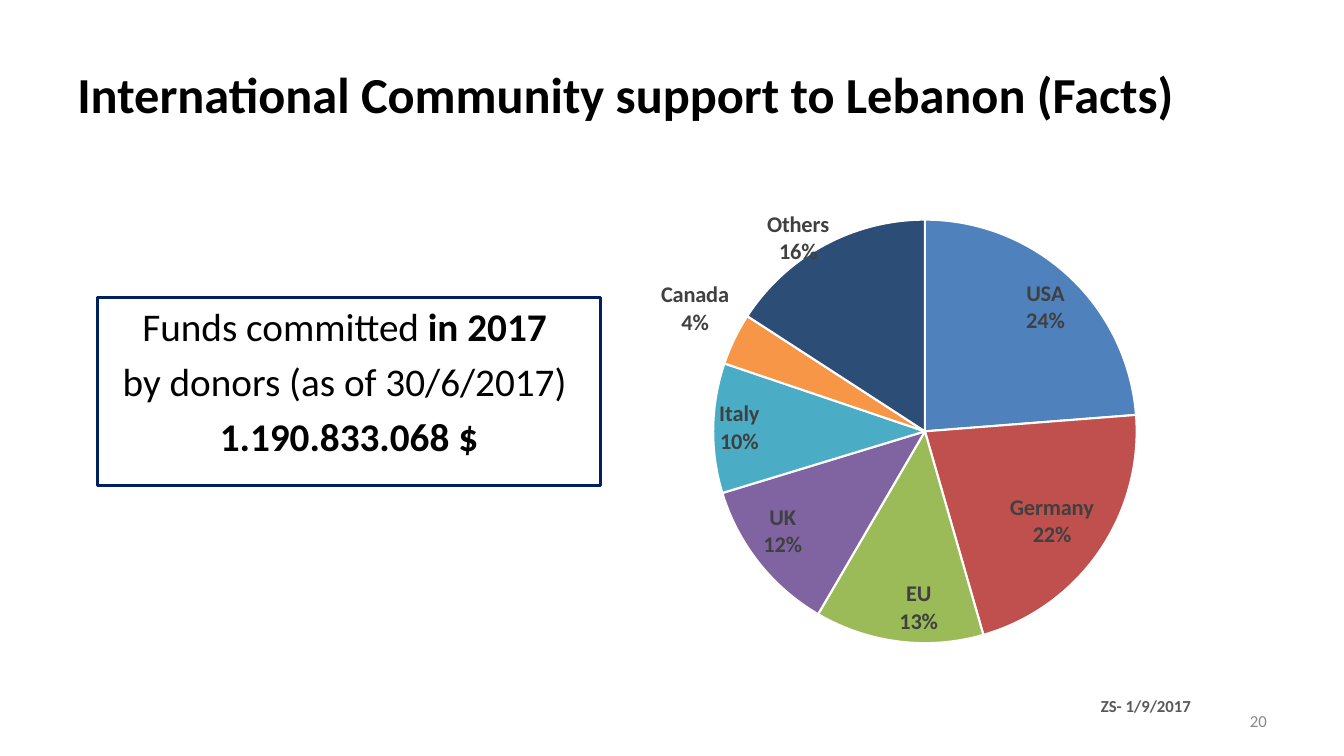
from dataclasses import dataclass
from typing import Any

from lxml import etree
from pptx import Presentation
from pptx import util as u
from pptx.chart import data as chart_data
from pptx.dml.color import RGBColor
from pptx.enum import chart as charts
from pptx.enum import shapes, text
from pptx.oxml import ns

BLACK = RGBColor(0x00, 0x00, 0x00)
WHITE = RGBColor(0xFF, 0xFF, 0xFF)
NAVY = RGBColor(0x00, 0x20, 0x60)
LABEL_GRAY = RGBColor(0x40, 0x40, 0x40)
DATE_GRAY = RGBColor(0x59, 0x59, 0x59)
NUMBER_GRAY = RGBColor(0x89, 0x89, 0x89)
BLUE = RGBColor(0x4F, 0x81, 0xBD)
RED = RGBColor(0xC0, 0x50, 0x4D)
GREEN = RGBColor(0x9B, 0xBB, 0x59)
PURPLE = RGBColor(0x80, 0x64, 0xA2)
TEAL = RGBColor(0x4B, 0xAC, 0xC6)
ORANGE = RGBColor(0xF7, 0x96, 0x46)
DARK_BLUE = RGBColor(0x2C, 0x4D, 0x75)

FONT = "Calibri"
LEFT, CENTER, RIGHT = text.PP_ALIGN.LEFT, text.PP_ALIGN.CENTER, text.PP_ALIGN.RIGHT
INSIDE = charts.XL_LABEL_POSITION.INSIDE_END
OUTSIDE = charts.XL_LABEL_POSITION.OUTSIDE_END


@dataclass
class Box:
    left: float
    top: float
    width: float
    height: float

    def lengths(self) -> list[u.Cm]:
        return [u.Cm(value) for value in (self.left, self.top, self.width, self.height)]


@dataclass
class Run:
    words: str
    bold: bool = False


@dataclass
class TextBlock:
    box: Box
    paragraphs: list[list[Run]]
    size: int
    color: RGBColor
    alignment: text.PP_ALIGN
    anchor: text.MSO_ANCHOR = text.MSO_ANCHOR.MIDDLE
    outline: RGBColor | None = None


@dataclass
class Donor:
    name: str
    share: int
    color: RGBColor
    position: charts.XL_LABEL_POSITION = INSIDE
    shift: tuple[float, float] = (0, 0)


TEXT_BLOCKS = [
    TextBlock(Box(1.7, 0.76, 30.48, 3.18),
              [[Run("International Community support to Lebanon (Facts)", True)]],
              36, BLACK, LEFT),
    TextBlock(Box(2.46, 7.49, 12.67, 4.75),
              [[Run("Funds committed "), Run("in 2017 ", True)],
               [Run("by donors (as of 30/6/2017) ")],
               [Run("1.190.833.068 $", True)]],
              28, BLACK, CENTER, text.MSO_ANCHOR.TOP, NAVY),
    TextBlock(Box(24.28, 17.65, 7.9, 1.02), [[Run("20")]], 12, NUMBER_GRAY, RIGHT),
    TextBlock(Box(26.52, 17.27, 4.72, 1.02), [[Run("ZS- 1/9/2017", True)]],
              12, DATE_GRAY, CENTER),
]

CHART_BOX = Box(12.95, 3.94, 20.93, 13.08)
PLOT_AREA = {"x": 0.24, "y": 0.12, "w": 0.51, "h": 0.82}
DONORS = [
    Donor("USA", 24, BLUE),
    Donor("Germany", 22, RED),
    Donor("EU", 13, GREEN),
    Donor("UK", 12, PURPLE),
    Donor("Italy", 10, TEAL),
    Donor("Canada", 4, ORANGE, OUTSIDE),
    Donor("Others", 16, DARK_BLUE, OUTSIDE, (0.01, 0.05)),
]


def apply_format(target: Any, values: dict[str, Any]) -> None:
    for name, value in values.items():
        setattr(target, name, value)


def format_font(font: Any, size: int, color: RGBColor, bold: bool) -> None:
    apply_format(font, {"name": FONT, "size": u.Pt(size), "bold": bold})
    font.color.rgb = color


def manual_layout(values: dict[str, Any]) -> Any:
    layout = etree.Element(ns.qn("c:layout"))
    manual = etree.SubElement(layout, ns.qn("c:manualLayout"))
    for name, value in values.items():
        etree.SubElement(manual, ns.qn(f"c:{name}")).set("val", str(value))
    return layout


def add_text_block(slide: Any, block: TextBlock) -> None:
    if block.outline is None:
        shape = slide.shapes.add_textbox(*block.box.lengths())
    else:
        shape = slide.shapes.add_shape(shapes.MSO_SHAPE.RECTANGLE, *block.box.lengths())
        shape.shadow.inherit = False
        shape.fill.background()
        shape.line.color.rgb = block.outline
        shape.line.width = u.Pt(2.25)
    frame = shape.text_frame
    apply_format(frame, {"word_wrap": True, "vertical_anchor": block.anchor})
    for index, runs in enumerate(block.paragraphs):
        paragraph = frame.add_paragraph() if index else frame.paragraphs[0]
        paragraph.alignment = block.alignment
        if index:
            paragraph.space_before = u.Pt(block.size * 0.2)
        for item in runs:
            run = paragraph.add_run()
            run.text = item.words
            format_font(run.font, block.size, block.color, item.bold)


def add_donor_pie(slide: Any, box: Box, donors: list[Donor]) -> None:
    data = chart_data.CategoryChartData()
    data.categories = [donor.name for donor in donors]
    data.add_series("Series 1", [donor.share for donor in donors])
    chart = slide.shapes.add_chart(charts.XL_CHART_TYPE.PIE, *box.lengths(), data).chart
    apply_format(chart, {"has_legend": False, "has_title": False})
    format_font(chart.font, 10, BLACK, False)
    plot = chart.plots[0]
    plot.vary_by_categories = True
    series = plot.series[0]
    for index, donor in enumerate(donors):
        point = series.points[index]
        point.format.fill.solid()
        point.format.fill.fore_color.rgb = donor.color
        point.format.line.color.rgb = WHITE
        point.format.line.width = u.Pt(1.5)
        format_font(point.data_label.font, 16, LABEL_GRAY, True)
        point.data_label.position = donor.position

    labels = series.data_labels
    flags = {"show_value": False, "show_category_name": True, "show_percentage": True}
    apply_format(labels, flags)
    format_font(labels.font, 16, LABEL_GRAY, True)
    label_flags = {"showVal": "0", "showCatName": "1", "showPercent": "1"}
    chart_root = chart.element
    for donor, label in zip(donors, chart_root.iter(ns.qn("c:dLbl"))):
        for name, value in label_flags.items():
            label.find(ns.qn(f"c:{name}")).set("val", value)
        if any(donor.shift):
            label.insert(1, manual_layout(dict(zip("xy", donor.shift))))
        separator = etree.SubElement(label, ns.qn("c:separator"))
        separator.text = "\n"

    plot_area = chart_root.find(".//" + ns.qn("c:plotArea"))
    for layout in plot_area.findall(ns.qn("c:layout")):
        plot_area.remove(layout)
    modes = {"layoutTarget": "inner", "xMode": "edge", "yMode": "edge"}
    plot_area.insert(0, manual_layout(modes | PLOT_AREA))


def main() -> None:
    presentation = Presentation()
    size = {"slide_width": u.Cm(33.87), "slide_height": u.Cm(19.05)}
    apply_format(presentation, size)
    slide = presentation.slides.add_slide(presentation.slide_layouts[6])
    for block in TEXT_BLOCKS:
        add_text_block(slide, block)
    add_donor_pie(slide, CHART_BOX, DONORS)
    presentation.save("out.pptx")


if __name__ == "__main__":
    main()
